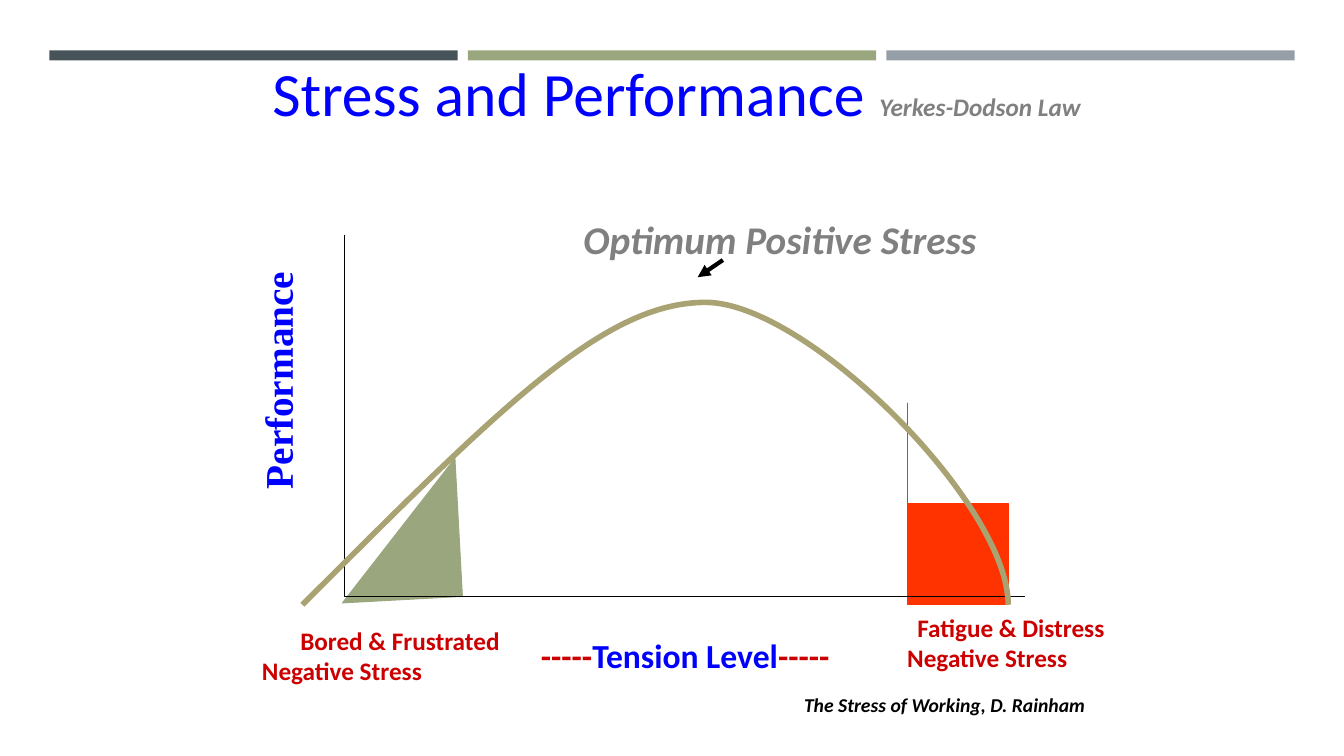
"""Build the stress and performance curve slide."""
from lxml import etree
from pptx import Presentation, util as u
from pptx.dml.color import RGBColor
from pptx.enum import shapes, text
from pptx.oxml.ns import qn

WIDE, HIGH = 13.33, 7.5
HUES = {"slate": "465359", "sage": "9AA67D", "steel": "969FA7", "blue": "0000FF",
        "grey": "808080", "red": "CC0000", "flame": "FF3300", "sand": "A9A273",
        "black": "000000"}
SANS, SERIF = "Calibri", "Times New Roman"

BARS = ["slate", "sage", "steel"]
BAR, STEP, EDGE = 4.05, 4.15, 0.49

LEFT, RIGHT, TOP, BASE = 3.42, 10.17, 2.33, 5.92
CURVE = [(LEFT, BASE), (4.56, 4.38), (5.71, 2.83), (6.83, 2.83),
         (7.96, 2.83), (9.62, 5.4), (RIGHT, BASE)]
WEDGE = [(8.92, 4.42), (9.42, 5), (9.75, 5.42), (10, 5.75), (RIGHT, BASE), (8.92, BASE)]
LINES = [((LEFT, TOP), (LEFT, BASE), 0.75, False),
         ((LEFT, BASE), (RIGHT, BASE), 0.75, False),
         ((7.17, 2.58), (6.92, 2.75), 3, True)]

TITLE = [("Stress and Performance ", 44, "blue", ""),
         ("Yerkes-Dodson Law", 18, "grey", "bi")]
LABELS = [
    {"at": (7.58, 6.83, 3.58, 0.33),
     "rows": [(None, [("The Stress of Working, D. Rainham", 14, "black", "bi")])]},
    {"at": (2.5, 6.07, 2.93, 0.87),
     "rows": [(0.38, [("Bored & Frustrated", 18, "red", "b")]),
              (0, [("Negative Stress", 18, "red", "b")])]},
    {"at": (5, 6.25, 3.59, 0.5),
     "rows": [(None, [("-----", 24, "red", "b"), ("Tension Level", 24, "blue", "b"),
                      ("-----", 24, "red", "b")])]},
    {"at": (1.57, 3.49, 2.36, 0.57), "turn": 270, "font": SERIF, "wrap": False,
     "rows": [(None, [("Performance", 28, "blue", "b")])]},
    {"at": (5.66, 2.08, 4.15, 0.57), "wrap": False,
     "rows": [(None, [("Optimum Positive Stress", 28, "grey", "bi")])]},
    {"at": (8.75, 6.02, 2.5, 0.7),
     "rows": [(0.25, [("Fatigue & Distress", 18, "red", "b")]),
              (0.15, [("Negative Stress", 18, "red", "b")])]},
]


def rgb(hue):
    return RGBColor.from_string(HUES[hue])


def inch(spot):
    return [u.Inches(n) for n in spot]


def paint(shape, fill=None, line=None, width=0.75):
    shape.shadow.inherit = False
    if fill:
        shape.fill.solid()
        shape.fill.fore_color.rgb = rgb(fill)
    else:
        shape.fill.background()
    if line:
        shape.line.color.rgb = rgb(line)
        shape.line.width = u.Pt(width)
    else:
        shape.line.fill.background()


def write(para, runs, font=SANS, indent=None):
    para.alignment = text.PP_ALIGN.CENTER if indent is None else text.PP_ALIGN.LEFT
    if indent:
        para._p.get_or_add_pPr().set("marL", str(u.Inches(indent)))
    for words, size, hue, style in runs:
        run = para.add_run()
        run.text = words
        run.font.name, run.font.size = font, u.Pt(size)
        run.font.color.rgb = rgb(hue)
        run.font.bold, run.font.italic = "b" in style, "i" in style


def trace(slide, spots, close):
    pen = slide.shapes.build_freeform(*spots[0], scale=u.Inches(1) / 1.0)
    pen.add_line_segments(spots[1:], close=close)
    return pen.convert_to_shape()


def bend(shape):
    steps = list(shape._element.iter(qn("a:lnTo")))
    for first in range(0, len(steps), 3):
        trio = steps[first:first + 3]
        arc = etree.Element(qn("a:cubicBezTo"))
        trio[0].addprevious(arc)
        for step in trio:
            arc.append(step[0])
            step.getparent().remove(step)


def rule(slide, start, end, width, arrow):
    line = slide.shapes.add_connector(shapes.MSO_CONNECTOR.STRAIGHT, *inch(start + end))
    line.line.color.rgb = rgb("black")
    line.line.width = u.Pt(width)
    props = line._element.spPr
    if arrow:
        etree.SubElement(props.find(qn("a:ln")), qn("a:tailEnd"), type="triangle")
    etree.SubElement(props, qn("a:effectLst"))


def label(slide, at, rows, turn=0, font=SANS, wrap=True):
    box = slide.shapes.add_textbox(*inch(at))
    box.rotation = turn
    frame = box.text_frame
    frame.word_wrap = wrap
    frame.vertical_anchor = text.MSO_ANCHOR.MIDDLE
    for num, (indent, runs) in enumerate(rows):
        para = frame.add_paragraph() if num else frame.paragraphs[0]
        write(para, runs, font, indent)


def main():
    deck = Presentation()
    deck.slide_width, deck.slide_height = inch((WIDE, HIGH))
    slide = deck.slides.add_slide(deck.slide_layouts[5])

    for num, hue in enumerate(BARS):
        spot = inch((EDGE + num * STEP, 0.5, BAR, 0.1))
        paint(slide.shapes.add_shape(shapes.MSO_SHAPE.RECTANGLE, *spot), hue)

    bored = slide.shapes.add_shape(shapes.MSO_SHAPE.RIGHT_TRIANGLE,
                                   *inch((3.36, 4.58, 1.19, 1.37)))
    paint(bored, "sage", "sage")
    bored.rotation = 356.9
    bored._element.spPr.find(qn("a:xfrm")).set("flipH", "1")
    paint(trace(slide, WEDGE, True), "flame", "flame")

    for line in LINES:
        rule(slide, *line)
    curve = trace(slide, CURVE, False)
    bend(curve)
    paint(curve, None, "sand", 4)

    for item in LABELS:
        label(slide, **item)

    title = slide.shapes.title
    title.left, title.top, title.width, title.height = inch((2, 0.33, 9.42, 1.17))
    title.text_frame.auto_size = text.MSO_AUTO_SIZE.NONE
    title.text_frame.vertical_anchor = text.MSO_ANCHOR.MIDDLE
    write(title.text_frame.paragraphs[0], TITLE)
    deck.save("out.pptx")


if __name__ == "__main__":
    main()
